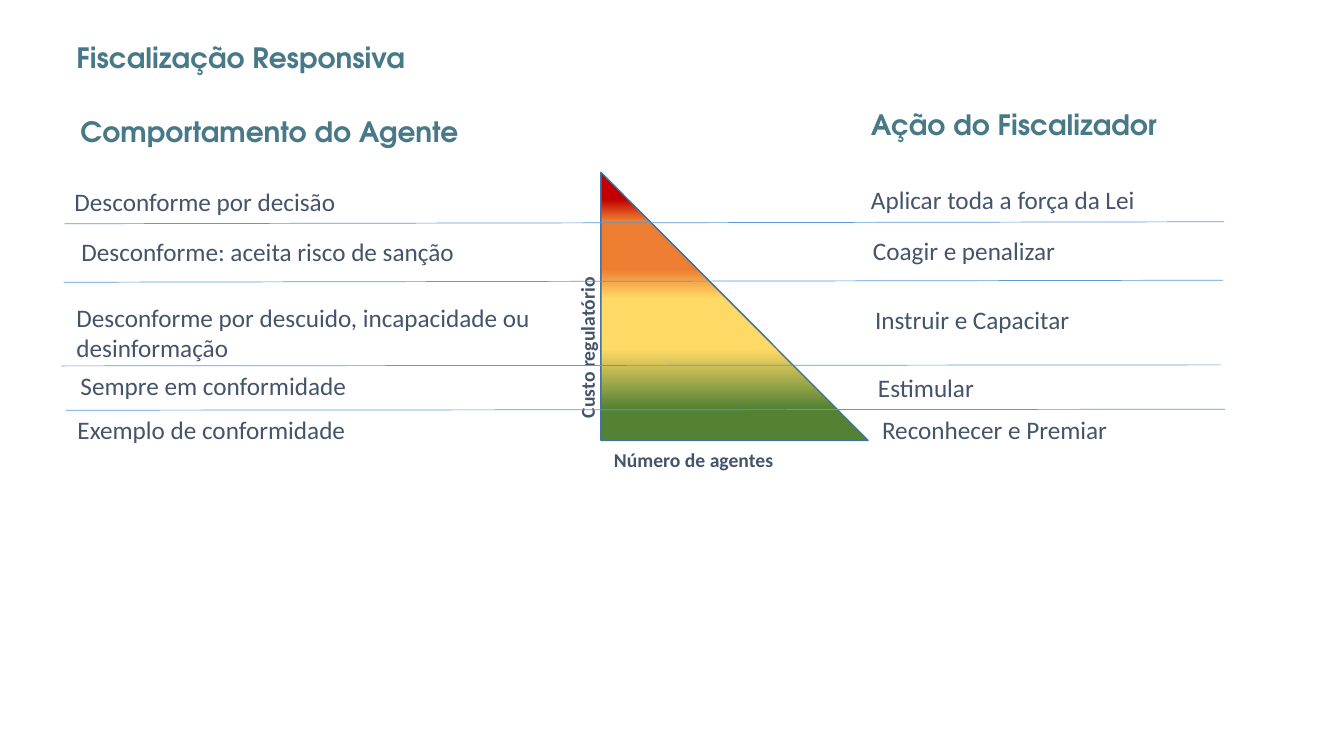
import pptx
import pptx.dml.color
import pptx.enum.shapes
import pptx.enum.text
import pptx.oxml
import pptx.oxml.ns
import pptx.util

PX = 9144
SLIDE = (1333, 750)
COLORS = {"heading": "487988", "label": "44546A", "outline": "43739E", "rule": "5B9BD5",
          "red": "C00000", "orange": "ED7D31", "yellow": "FFD966", "green": "548235"}
BODY_FONT = "Calibri"
HEADING_FONT = "TeX Gyre Adventor"

HEADINGS = [
    ("Fiscalização Responsiva", (66, 35, 450, 44)),
    ("Comportamento do Agente", (70, 109, 450, 44)),
    ("Ação do Fiscalizador", (854, 102, 436, 44)),
]
LEVELS = [
    ("Desconforme por decisão", (64, 180, 444, 40), True),
    ("Aplicar toda a força da Lei", (854, 178, 346, 40), True),
    ("Desconforme: aceita risco de sanção", (71, 230, 462, 40), True),
    ("Coagir e penalizar", (856, 229, 203, 40), False),
    ("Desconforme por descuido, incapacidade ou desinformação", (66, 295, 506, 71), True),
    ("Instruir e Capacitar", (858, 297, 215, 40), False),
    ("Sempre em conformidade", (70, 362, 287, 40), False),
    ("Estimular", (861, 364, 116, 40), False),
    ("Exemplo de conformidade", (67, 406, 289, 40), False),
    ("Reconhecer e Premiar", (865, 406, 246, 40), False),
]
COST_AXIS = ("Custo regulatório", (502, 327, 161, 34))
AGENT_AXIS = ("Número de agentes", (599, 439, 179, 34))
PYRAMID = (596, 171, 265, 266)
PYRAMID_STOPS = [(10, "red"), (18, "orange"), (36, "orange"),
                 (47, "yellow"), (66, "yellow"), (88, "green")]
RULE_WIDTH = 1150
RULES = [(64, 222, 220), (63, 280, 278), (61, 363, 362), (65, 407, 406)]


def scaled(lengths):
    return [length * PX for length in lengths]


def color(name):
    return pptx.dml.color.RGBColor.from_string(COLORS[name])


def add_text(page, text, place, *, size=18, font=BODY_FONT, ink="label",
             bold=False, wrap=False, rotation=0):
    box = page.shapes.add_textbox(*scaled(place))
    box.rotation = rotation
    frame = box.text_frame
    frame.word_wrap = wrap
    frame.auto_size = pptx.enum.text.MSO_AUTO_SIZE.SHAPE_TO_FIT_TEXT
    span = frame.paragraphs[0].add_run()
    span.text = text
    span.font.size = pptx.util.Pt(size)
    span.font.name = font
    span.font.bold = bold
    span.font.color.rgb = color(ink)


def add_pyramid(page):
    pyramid = page.shapes.add_shape(
        pptx.enum.shapes.MSO_SHAPE.RIGHT_TRIANGLE, *scaled(PYRAMID))
    pyramid.shadow.inherit = False
    pyramid.line.color.rgb = color("outline")
    pyramid.line.width = pptx.util.Pt(1)
    pyramid.fill.gradient()
    stops = "".join(
        f'<a:gs pos="{percent * 1000}"><a:srgbClr val="{COLORS[name]}"/></a:gs>'
        for percent, name in PYRAMID_STOPS)
    gradient = pptx.oxml.parse_xml(
        f'<a:gradFill {pptx.oxml.ns.nsdecls("a")} rotWithShape="1">'
        f'<a:gsLst>{stops}</a:gsLst><a:lin ang="5400000" scaled="0"/></a:gradFill>')
    properties = pyramid._element.spPr
    properties.replace(properties.find(pptx.oxml.ns.qn("a:gradFill")), gradient)


def add_rule(page, left, start, end):
    rule = page.shapes.add_connector(
        pptx.enum.shapes.MSO_CONNECTOR.STRAIGHT,
        *scaled((left, start, left + RULE_WIDTH, end)))
    rule.line.color.rgb = color("rule")
    rule.line.width = pptx.util.Pt(0.5)
    rule._element.spPr.append(
        pptx.oxml.parse_xml(f'<a:effectLst {pptx.oxml.ns.nsdecls("a")}/>'))


def main():
    deck = pptx.Presentation()
    deck.slide_width, deck.slide_height = scaled(SLIDE)
    page = deck.slides.add_slide(deck.slide_layouts[6])
    for text, place in HEADINGS:
        add_text(page, text, place, size=20, font=HEADING_FONT,
                 ink="heading", bold=True, wrap=True)
    for text, place, wrap in LEVELS:
        add_text(page, text, place, wrap=wrap)
    add_text(page, *COST_AXIS, size=14, bold=True, rotation=270)
    add_pyramid(page)
    add_text(page, *AGENT_AXIS, size=14, bold=True)
    for left, start, end in RULES:
        add_rule(page, left, start, end)
    deck.save("out.pptx")


if __name__ == "__main__":
    main()
